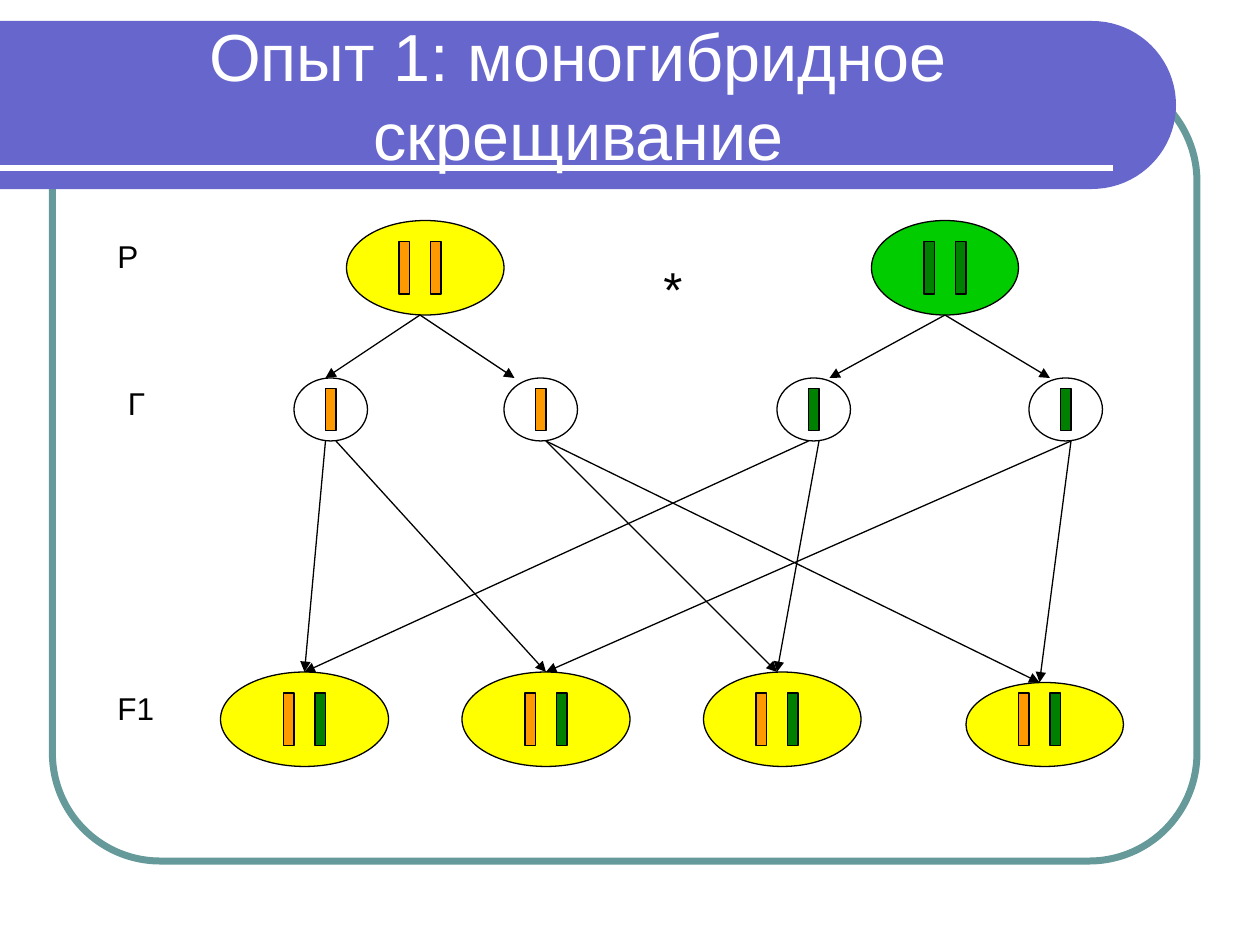
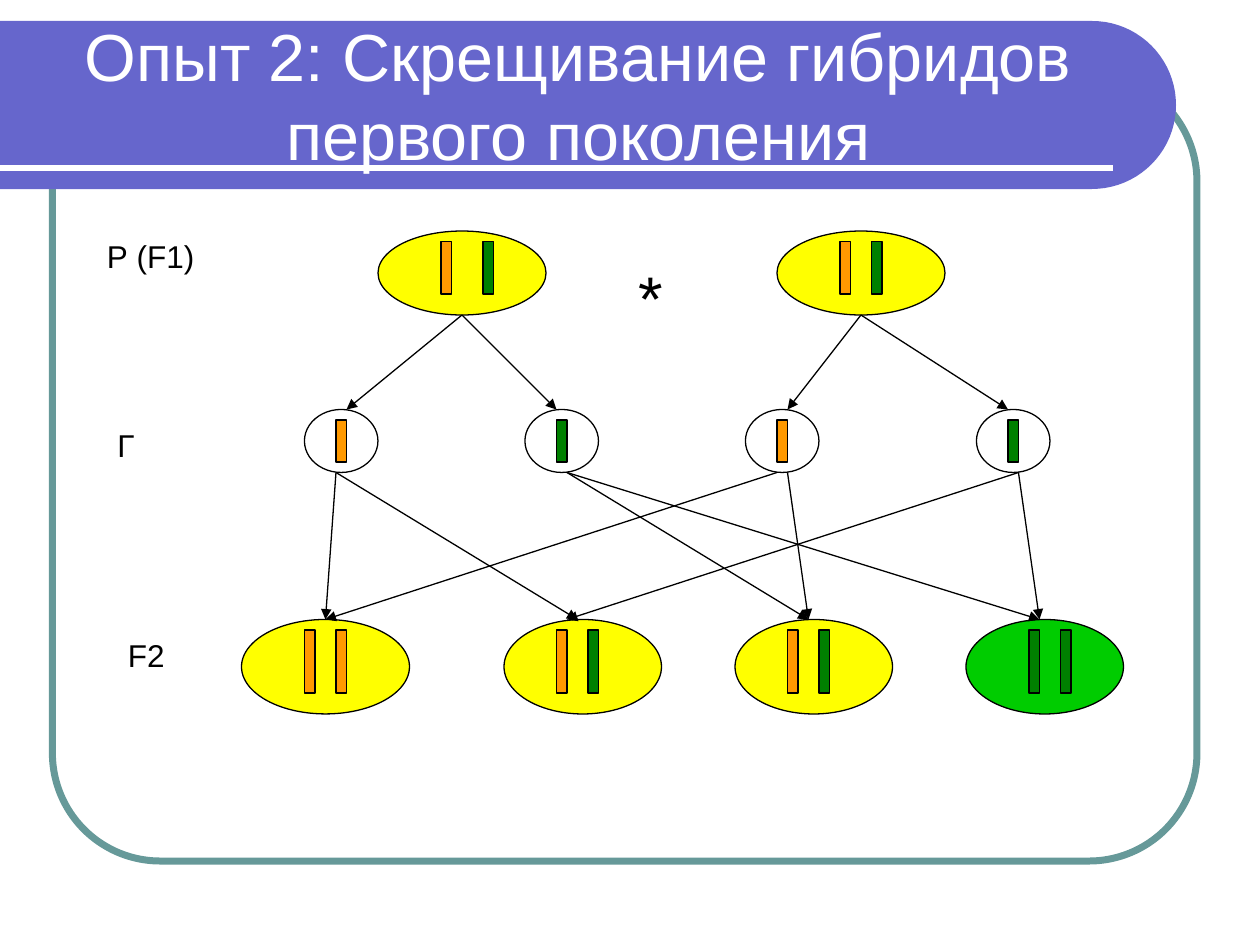
from dataclasses import dataclass
from math import cos, pi, sin

from lxml.etree import SubElement
from pptx import Presentation
from pptx.dml.color import RGBColor
from pptx.enum.shapes import MSO_CONNECTOR, MSO_SHAPE
from pptx.enum.text import MSO_ANCHOR, PP_ALIGN
from pptx.oxml.ns import qn
from pptx.util import Emu, Inches, Pt

# Slide grid: 120 columns by 90 rows of square units
COLS, ROWS = 120, 90
WIDTH, HEIGHT = Inches(10), Inches(7.5)
UNIT = WIDTH / COLS

# Shared style
FONT = "Arial"
BAND, FRAME = "6666CC", "669999"
WHITE, BLACK = "FFFFFF", "000000"
YELLOW, GREEN = "FFFF00", "00CC00"
DOMINANT, RECESSIVE = "FF9900", "008000"
CHROMOSOME_WIDTH = 1
GAMETE_WIDTH, GAMETE_HEIGHT = 7, 6


@dataclass(frozen=True)
class Chromosome:
    col: float
    color: str


@dataclass(frozen=True)
class Organism:
    col: float
    row: float
    width: float
    height: float
    fill: str
    chromosomes: tuple[Chromosome, ...]


@dataclass(frozen=True)
class Generation:
    organisms: tuple[Organism, ...]
    chromosome_row: float
    chromosome_height: float


@dataclass(frozen=True)
class Label:
    text: str
    col: float
    row: float
    width: float
    height: float = 4.8
    size: float = 18
    align: PP_ALIGN = PP_ALIGN.LEFT


@dataclass(frozen=True)
class Cross:
    title: str
    parents: Generation
    gametes: Generation
    offspring: Generation
    splits: tuple[tuple[float, tuple[float, float]], ...]  # start, two ends
    unions: tuple[tuple[tuple[float, float], ...], ...]  # (start, end) per child
    labels: tuple[Label, ...]


def u(n: float) -> Emu:
    return Emu(round(n * UNIT))


def rgb(color: str) -> RGBColor:
    return RGBColor.from_string(color)


def pair(left: float, right: float, first=DOMINANT, second=RECESSIVE):
    return Chromosome(left, first), Chromosome(right, second)


def make_gametes(row: float, cols: tuple, colors: tuple) -> Generation:
    return Generation(
        tuple(Organism(c, row, GAMETE_WIDTH, GAMETE_HEIGHT, WHITE,
                       (Chromosome(c + 3, color),))
              for c, color in zip(cols, colors)),
        chromosome_row=row + 1, chromosome_height=4)


# Drawing helpers
def add_shape(s, kind, col, row, width, height, fill=None, line=BLACK, weight=0.75):
    sp = s.shapes.add_shape(kind, u(col), u(row), u(width), u(height))
    sp.shadow.inherit = False
    if fill:
        sp.fill.solid()
        sp.fill.fore_color.rgb = rgb(fill)
    else:
        sp.fill.background()
    sp.line.color.rgb = rgb(line)
    sp.line.width = Pt(weight)
    return sp


def add_line(s, x1, y1, x2, y2, color=BLACK, weight=0.75, arrow=False):
    line = s.shapes.add_connector(MSO_CONNECTOR.STRAIGHT, u(x1), u(y1), u(x2), u(y2))
    line.line.color.rgb = rgb(color)
    line.line.width = Pt(weight)
    if arrow:
        SubElement(line.line._get_or_add_ln(), qn("a:tailEnd"), type="triangle")
    SubElement(line._element.spPr, qn("a:effectLst"))
    return line


def add_text(s, text, col, row, width, height, *, size=18, color=BLACK,
             align=PP_ALIGN.LEFT, anchor=MSO_ANCHOR.TOP):
    tf = s.shapes.add_textbox(u(col), u(row), u(width), u(height)).text_frame
    tf.word_wrap = True
    tf.vertical_anchor = anchor
    p = tf.paragraphs[0]
    p.alignment = align
    r = p.add_run()
    r.text = text
    r.font.name, r.font.size = FONT, Pt(size)
    r.font.color.rgb = rgb(color)


def add_band(s, top: float, height: float, right: float) -> None:
    """Title band whose right end is a half circle."""
    radius, steps = height / 2, 40
    angles = [-pi / 2 + pi * i / steps for i in range(steps + 1)]
    arc = [(u(right - radius + radius * cos(a)), u(top + radius + radius * sin(a)))
           for a in angles]
    builder = s.shapes.build_freeform(0, u(top))
    builder.add_line_segments([*arc, (0, u(top + height))], close=True)
    sp = builder.convert_to_shape()
    sp.shadow.inherit = False
    sp.fill.solid()
    sp.fill.fore_color.rgb = rgb(BAND)
    sp.line.fill.background()


def add_background(s, title: str) -> None:
    frame = add_shape(s, MSO_SHAPE.ROUNDED_RECTANGLE, 5, 7, 109, 75, line=FRAME, weight=4)
    frame.adjustments[0] = 0.137
    add_band(s, top=2, height=16, right=112)
    add_line(s, 0, 16, 106, 16, WHITE, 3)
    add_text(s, title, 2.5, 3, 105.2, 12, size=38, color=WHITE,
             align=PP_ALIGN.CENTER, anchor=MSO_ANCHOR.MIDDLE)


def add_generation(s, generation: Generation) -> list:
    ovals = []
    for o in generation.organisms:
        ovals.append(add_shape(s, MSO_SHAPE.OVAL, o.col, o.row, o.width, o.height, o.fill))
        for c in o.chromosomes:
            add_shape(s, MSO_SHAPE.RECTANGLE, c.col, generation.chromosome_row,
                      CHROMOSOME_WIDTH, generation.chromosome_height, c.color)
    return ovals


def add_cross(prs, cross: Cross) -> None:
    s = prs.slides.add_slide(prs.slide_layouts[6])
    add_background(s, cross.title)
    add_generation(s, cross.parents)
    add_generation(s, cross.gametes)
    children = add_generation(s, cross.offspring)

    # Parents to gametes
    gamete_row = cross.gametes.organisms[0].row
    for parent, (start, ends) in zip(cross.parents.organisms, cross.splits):
        for end in ends:
            add_line(s, start, parent.row + parent.height, end, gamete_row, arrow=True)

    # Gametes to offspring
    for child, oval, union in zip(cross.offspring.organisms, children, cross.unions):
        for start, end in union:
            line = add_line(s, start, gamete_row + GAMETE_HEIGHT, end, child.row, arrow=True)
            if end == child.col + child.width / 2:
                line.end_connect(oval, 0)

    for label in cross.labels:
        add_text(s, label.text, label.col, label.row, label.width, label.height,
                 size=label.size, align=label.align)


CROSSES = (
    Cross(
        "Опыт 1: моногибридное скрещивание",
        parents=Generation((
            Organism(33, 21, 15, 9, YELLOW, pair(38, 41, second=DOMINANT)),
            Organism(83, 21, 14, 9, GREEN, pair(88, 91, first=RECESSIVE)),
        ), chromosome_row=23, chromosome_height=5),
        gametes=make_gametes(36, (28, 48, 74, 98),
                             (DOMINANT, DOMINANT, RECESSIVE, RECESSIVE)),
        offspring=Generation((
            Organism(21, 64, 16, 9, YELLOW, pair(27, 30)),
            Organism(44, 64, 16, 9, YELLOW, pair(50, 53)),
            Organism(67, 64, 15, 9, YELLOW, pair(72, 75)),
            Organism(92, 65, 15, 8, YELLOW, pair(97, 100)),
        ), chromosome_row=66, chromosome_height=5),
        splits=((40, (31, 49)), (90, (79, 100))),
        unions=(((31, 29), (77, 29)), ((32, 52), (102, 52)),
                ((52, 74), (78, 74)), ((52, 99), (102, 99))),
        labels=(Label("Р", 10, 22, 12), Label("Г", 11, 36, 8), Label("F1", 10, 65, 8),
                Label("*", 62, 24, 6, 6.8, size=28)),
    ),
    Cross(
        "Опыт 2: Скрещивание гибридов первого поколения",
        parents=Generation((
            Organism(36, 22, 16, 8, YELLOW, pair(42, 46)),
            Organism(74, 22, 16, 8, YELLOW, pair(80, 83)),
        ), chromosome_row=23, chromosome_height=5),
        gametes=make_gametes(39, (29, 50, 71, 93),
                             (DOMINANT, RECESSIVE, DOMINANT, RECESSIVE)),
        offspring=Generation((
            Organism(23, 59, 16, 9, YELLOW, pair(29, 32, second=DOMINANT)),
            Organism(48, 59, 15, 9, YELLOW, pair(53, 56)),
            Organism(70, 59, 15, 9, YELLOW, pair(75, 78)),
            Organism(92, 59, 15, 9, GREEN, pair(98, 101, first=RECESSIVE)),
        ), chromosome_row=60, chromosome_height=6),
        splits=((44, (33, 53)), (82, (75, 96))),
        unions=(((32, 31), (74, 31)), ((32, 55), (97, 54)),
                ((54, 77), (75, 77)), ((54, 99), (97, 99))),
        labels=(Label("Р (F1)", 9, 22, 15), Label("Г", 10, 40, 11), Label("F2", 11, 60, 9),
                Label("*", 59, 24, 6, 8.4, size=36, align=PP_ALIGN.CENTER)),
    ),
)


def main() -> None:
    prs = Presentation()
    prs.slide_width, prs.slide_height = WIDTH, HEIGHT
    for cross in CROSSES:
        add_cross(prs, cross)
    prs.save("out.pptx")


if __name__ == "__main__":
    main()
